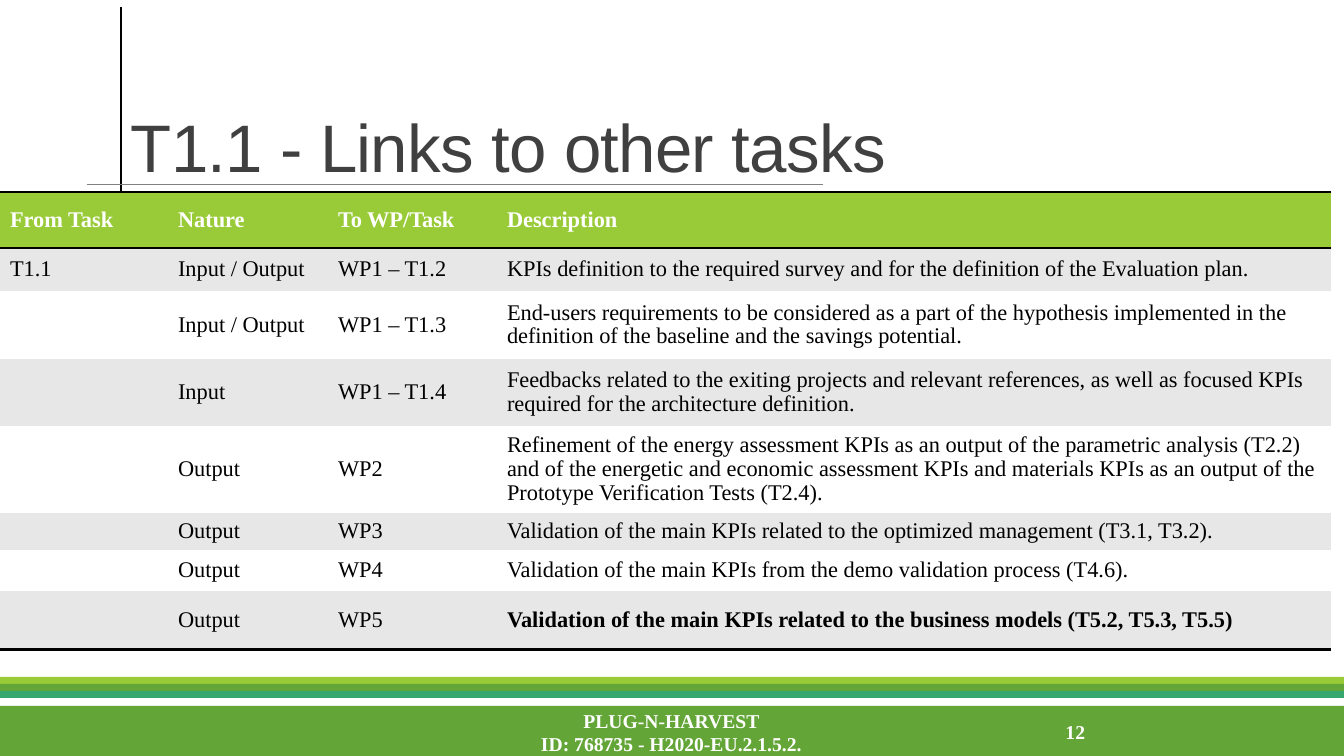
from dataclasses import dataclass

from lxml import etree
from pptx import Presentation
from pptx import util as u
from pptx.dml.color import RGBColor
from pptx.enum import shapes, text
from pptx.oxml import ns

SCALE = 914400 / 100.8


@dataclass(frozen=True)
class Theme:
    lime: str = "99CB38"
    green: str = "63A537"
    teal: str = "37A76F"
    black: str = "000000"
    white: str = "FFFFFF"
    dark: str = "404040"
    gray: str = "808080"
    band: str = "E7E7E7"
    sans: str = "Arial"
    serif: str = "Times New Roman"
    title: int = 48
    body: int = 16
    foot: int = 14


THEME = Theme()
PLAIN = "{2D5ABB26-0587-4C30-8999-92F81FD0307C}"  # table style without grid
COLS = [168, 160, 169, 834]
HEIGHTS = [56, 43, 68, 67, 85, 37, 41, 59]
ROWS = [
    ("From Task", "Nature", "To WP/Task", "Description"),
    ("T1.1", "Input / Output", "WP1 – T1.2",
     "KPIs definition to the required survey and for the definition of the "
     "Evaluation plan."),
    ("", "Input / Output", "WP1 – T1.3",
     "End-users requirements to be considered as a part of the hypothesis "
     "implemented in the definition of the baseline and the savings potential."),
    ("", "Input", "WP1 – T1.4",
     "Feedbacks related to the exiting projects and relevant references, as well "
     "as focused KPIs required for the architecture definition."),
    ("", "Output", "WP2",
     "Refinement of the energy assessment KPIs as an output of the parametric "
     "analysis (T2.2) and of the energetic and economic assessment KPIs and "
     "materials KPIs as an output of the Prototype Verification Tests (T2.4)."),
    ("", "Output", "WP3",
     "Validation of the main KPIs related to the optimized management (T3.1, T3.2)."),
    ("", "Output", "WP4",
     "Validation of the main KPIs from the demo validation process (T4.6)."),
    ("", "Output", "WP5",
     "Validation of the main KPIs related to the business models (T5.2, T5.3, T5.5)"),
]


def px(n):
    return u.Emu(round(n * SCALE))


def rgb(code):
    return RGBColor.from_string(code)


def write(frame, words, size=THEME.body, color=THEME.black, font=THEME.serif,
          bold=False, align=text.PP_ALIGN.LEFT, space=None, track=None):
    para = frame.paragraphs[0]
    para.alignment = align
    para.line_spacing = space
    if not words:
        end = etree.SubElement(para._p, ns.qn("a:endParaRPr"))
        end.set("sz", str(size * 100))
        return
    for i, line in enumerate(words.split("\n")):
        if i:
            para.add_line_break()
        run = para.add_run()
        run.text = line
        run.font.size = u.Pt(size)
        run.font.name = font
        run.font.bold = bold
        run.font.color.rgb = rgb(color)
        if track:
            run.font._element.set("spc", str(track))


def label(slide, words, x, y, w, h, anchor=text.MSO_ANCHOR.MIDDLE, **style):
    frame = slide.shapes.add_textbox(px(x), px(y), px(w), px(h)).text_frame
    frame.word_wrap = True
    frame.vertical_anchor = anchor
    write(frame, words, **style)


def bar(slide, y, h, color):
    shape = slide.shapes.add_shape(
        shapes.MSO_SHAPE.RECTANGLE, 0, px(y), px(1344), px(h))
    shape.shadow.inherit = False
    shape.fill.solid()
    shape.fill.fore_color.rgb = rgb(color)
    shape.line.fill.background()


def rule(slide, x, y, right, low, color, width):
    line = slide.shapes.add_connector(
        shapes.MSO_CONNECTOR.STRAIGHT, px(x), px(y), px(right), px(low))
    line.line.color.rgb = rgb(color)
    line.line.width = u.Pt(width)
    etree.SubElement(line._element.spPr, ns.qn("a:effectLst"))


def edge(cell, sides):
    props = cell._tc.get_or_add_tcPr()
    for i, side in enumerate(sides):
        line = etree.Element(ns.qn("a:ln" + side), w=str(u.Pt(2)))
        fill = etree.SubElement(line, ns.qn("a:solidFill"))
        etree.SubElement(fill, ns.qn("a:srgbClr"), val=THEME.black)
        props.insert(i, line)


def grid(slide, x, y):
    table = slide.shapes.add_table(
        len(ROWS), len(COLS), px(x), px(y), px(sum(COLS)), px(sum(HEIGHTS))).table
    table._tbl.tblPr.find(ns.qn("a:tableStyleId")).text = PLAIN
    for col, w in zip(table.columns, COLS):
        col.width = px(w)
    last = len(ROWS) - 1
    for r, row in enumerate(ROWS):
        table.rows[r].height = px(HEIGHTS[r])
        head = r == 0
        tint = THEME.lime if head else THEME.band if r % 2 else THEME.white
        for c, words in enumerate(row):
            cell = table.cell(r, c)
            cell.fill.solid()
            cell.fill.fore_color.rgb = rgb(tint)
            cell.vertical_anchor = text.MSO_ANCHOR.MIDDLE
            write(cell.text_frame, words, space=0.95,
                  color=THEME.white if head else THEME.black,
                  bold=head or (r == last and c == 3))
            if head:
                edge(cell, "TB")
            elif r == last:
                edge(cell, "B")


def main():
    deck = Presentation()
    deck.slide_width, deck.slide_height = px(1344), px(756)
    slide = deck.slides.add_slide(deck.slide_layouts[6])

    # Footer bands
    for i, color in enumerate((THEME.lime, THEME.green, THEME.teal)):
        bar(slide, 677 + 7 * i, 7, color)
    bar(slide, 706, 50, THEME.green)

    # Title rules
    rule(slide, 121, 7, 121, 400, THEME.black, 1)
    rule(slide, 87, 184, 823, 184, THEME.gray, 0.5)

    # Footer text
    foot = dict(size=THEME.foot, color=THEME.white, bold=True)
    label(slide, "PLUG-N-HARVEST\nID: 768735 - H2020-EU.2.1.5.2.",
          406, 712, 531, 40, align=text.PP_ALIGN.CENTER, **foot)
    label(slide, "12", 951, 712, 144, 40, align=text.PP_ALIGN.RIGHT, **foot)

    # Title and table
    label(slide, "T1.1 - Links to other tasks", 121, 31, 1109, 160,
          anchor=text.MSO_ANCHOR.BOTTOM, size=THEME.title, color=THEME.dark,
          font=THEME.sans, space=0.85, track=-50)
    grid(slide, 0, 192)

    deck.save("out.pptx")


if __name__ == "__main__":
    main()
